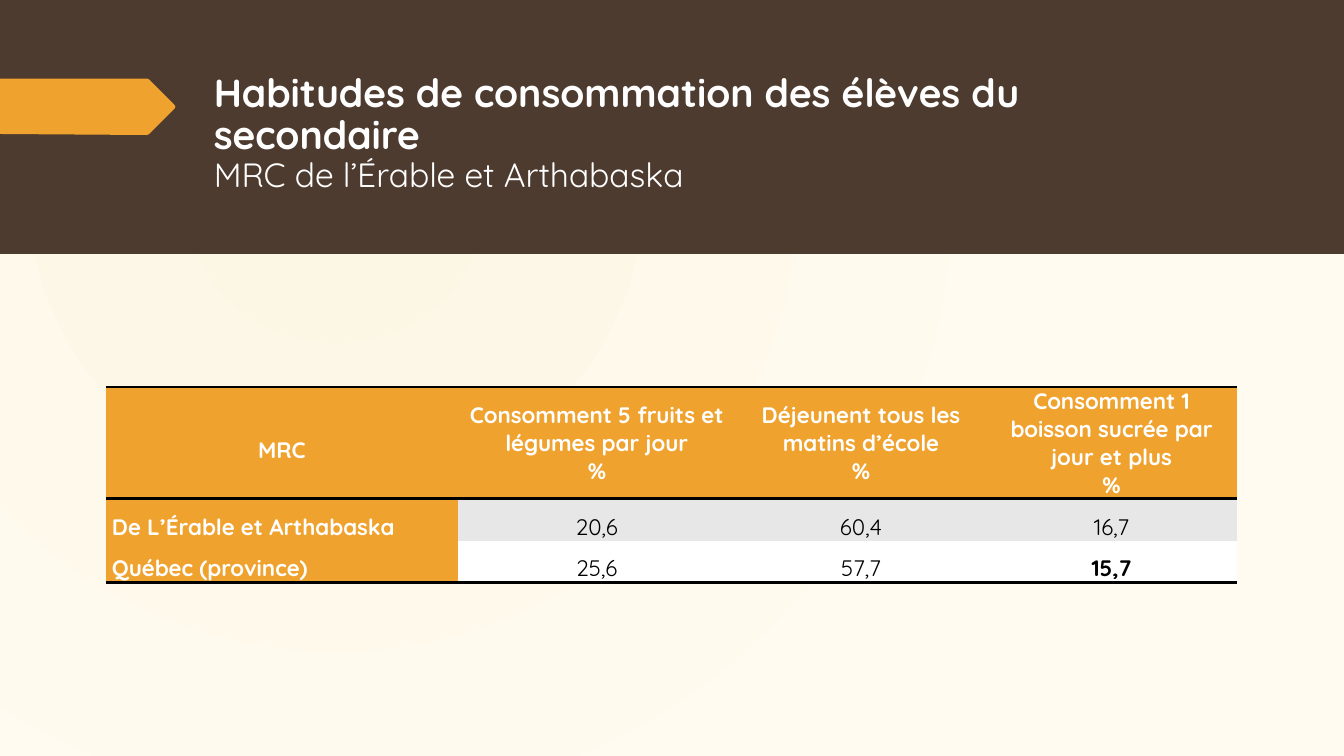
from dataclasses import dataclass

from pptx import Presentation
from pptx.dml.color import RGBColor
from pptx.enum.text import MSO_ANCHOR, MSO_AUTO_SIZE, PP_ALIGN
from pptx.enum.shapes import MSO_SHAPE
from pptx.oxml import parse_xml
from pptx.oxml.ns import nsdecls, qn
from pptx.util import Inches, Pt

RECT = MSO_SHAPE.RECTANGLE
TOP, MIDDLE = MSO_ANCHOR.TOP, MSO_ANCHOR.MIDDLE
LEFT, CENTER = PP_ALIGN.LEFT, PP_ALIGN.CENTER
NO_AUTOFIT = MSO_AUTO_SIZE.NONE
NO_TABLE_STYLE = "{2D5ABB26-0587-4C30-8999-92F81FD0307C}"


@dataclass(frozen=True)
class Theme:
    font: str = "Quicksand"
    brown: str = "4E3B30"
    orange: str = "F0A22E"
    white: str = "FFFFFF"
    black: str = "000000"
    grey: str = "E7E7E7"
    glow: str = "FCF6E5"
    cream: str = "FFFBF0"
    title: int = 28
    subtitle: int = 24
    body: int = 16
    rule: int = 2


def set_all(target, values):
    for name, value in values.items():
        setattr(target, name, value)


class SlideBuilder:
    def __init__(self, prs, theme):
        self.theme = theme
        self.s = prs.slides.add_slide(prs.slide_layouts[5])

    def style(self, font, size, color, bold):
        set_all(font, {"name": self.theme.font, "size": Pt(size), "bold": bold})
        font.color.rgb = RGBColor.from_string(color)

    def paint(self, sp, color):
        sp.shadow.inherit = False
        sp.fill.solid()
        sp.fill.fore_color.rgb = RGBColor.from_string(color)
        sp.line.fill.background()

    def background(self, inner, outer):
        """Radial gradient centred a quarter of the way in from the top left."""
        fill = self.s.background.fill
        fill.gradient()
        for stop, color in zip(fill.gradient_stops, (inner, outer)):
            stop.color.rgb = RGBColor.from_string(color)
        grad = self.s._element.find(".//" + qn("a:gradFill"))
        grad.replace(grad.find(qn("a:lin")), parse_xml(
            f'<a:path {nsdecls("a")} path="circle">'
            '<a:fillToRect l="50000" t="50000" r="100000" b="100000"/></a:path>'))

    def band(self, box, color):
        """Rectangle placed behind everything else."""
        sp = self.s.shapes.add_shape(RECT, *map(Inches, box))
        self.paint(sp, color)
        self.s.shapes._spTree.insert(2, sp._element)

    def outline(self, points, color):
        corners = [(Inches(x), Inches(y)) for x, y in points]
        builder = self.s.shapes.build_freeform(*corners[0])
        builder.add_line_segments(corners[1:], close=True)
        self.paint(builder.convert_to_shape(), color)

    def title(self, box, heading, subtitle):
        t = self.theme
        sp = self.s.shapes.title
        set_all(sp, dict(zip(("left", "top", "width", "height"), map(Inches, box))))
        tf = sp.text_frame
        set_all(tf, {"word_wrap": True, "auto_size": NO_AUTOFIT, "vertical_anchor": TOP})
        p = tf.paragraphs[0]
        set_all(p, {"alignment": LEFT, "line_spacing": 0.9})
        for text, size, bold in ((heading, t.title, True), (subtitle, t.subtitle, False)):
            if p.runs:
                p.add_line_break()
            r = p.add_run()
            r.text = text
            self.style(r.font, size, t.white, bold)

    def cell(self, cell, text, fill, color, bold, align, edges):
        set_all(cell, {"vertical_anchor": MIDDLE,
                       "margin_left": Inches(0.06), "margin_right": Inches(0.06),
                       "margin_top": 0, "margin_bottom": 0})
        cell.fill.solid()
        cell.fill.fore_color.rgb = RGBColor.from_string(fill)
        cell.text = text
        paragraphs = cell.text_frame.paragraphs
        spacing = 1.5 if len(paragraphs) == 1 else 1.0
        for p in paragraphs:
            set_all(p, {"alignment": align, "line_spacing": spacing})
            for r in p.runs:
                self.style(r.font, self.theme.body, color, bold)
        tc_pr = cell._tc.get_or_add_tcPr()
        for i, edge in enumerate(edges):
            tc_pr.insert(i, parse_xml(
                f'<a:ln{edge} {nsdecls("a")} w="{Pt(self.theme.rule)}"><a:solidFill>'
                f'<a:srgbClr val="{self.theme.black}"/></a:solidFill></a:ln{edge}>'))

    def table(self, left, top, widths, heights, rows, bold_values):
        t = self.theme
        frame = self.s.shapes.add_table(
            len(rows), len(widths), Inches(left), Inches(top),
            Inches(sum(widths)), Inches(sum(heights)))
        table = frame.table
        table._tbl.tblPr.find(qn("a:tableStyleId")).text = NO_TABLE_STYLE
        for column, width in zip(table.columns, widths):
            column.width = Inches(width)
        for row, height in zip(table.rows, heights):
            row.height = Inches(height)
        for i, texts in enumerate(rows):
            edges = "TB" if i == 0 else "B" if i == len(rows) - 1 else ""
            for j, text in enumerate(texts):
                if i == 0 or j == 0:
                    fill, color, bold = t.orange, t.white, True
                else:
                    fill = t.grey if i % 2 else t.white
                    color, bold = t.black, text in bold_values
                align = LEFT if i and j == 0 else CENTER
                self.cell(table.cell(i, j), text, fill, color, bold, align, edges)


def main():
    prs = Presentation()
    prs.slide_width, prs.slide_height = Inches(13.33), Inches(7.5)
    theme = Theme()
    slide = SlideBuilder(prs, theme)
    slide.background(theme.glow, theme.cream)
    slide.band((0, 0, 13.33, 2.52), theme.brown)
    slide.title((2.02, 0.68, 10.26, 1.4),
                "Habitudes de consommation des élèves du secondaire",
                "MRC de l’Érable et Arthabaska")
    slide.outline([(0, 0.78), (1.46, 0.78), (1.48, 0.79), (1.73, 1.04), (1.74, 1.06),
                   (1.73, 1.08), (1.48, 1.33), (1.46, 1.34), (0, 1.33)], theme.orange)
    slide.table(
        1.05, 3.84, (3.49, 2.76, 2.48, 2.49), (0.73, 0.33, 0.33),
        [("MRC", "Consomment 5 fruits et légumes par jour\n%",
          "Déjeunent tous les matins d’école\n%",
          "Consomment 1 boisson sucrée par jour et plus\n%"),
         ("De L’Érable et Arthabaska", "20,6", "60,4", "16,7"),
         ("Québec (province)", "25,6", "57,7", "15,7")],
        bold_values={"15,7"})
    prs.save("out.pptx")


if __name__ == "__main__":
    main()
